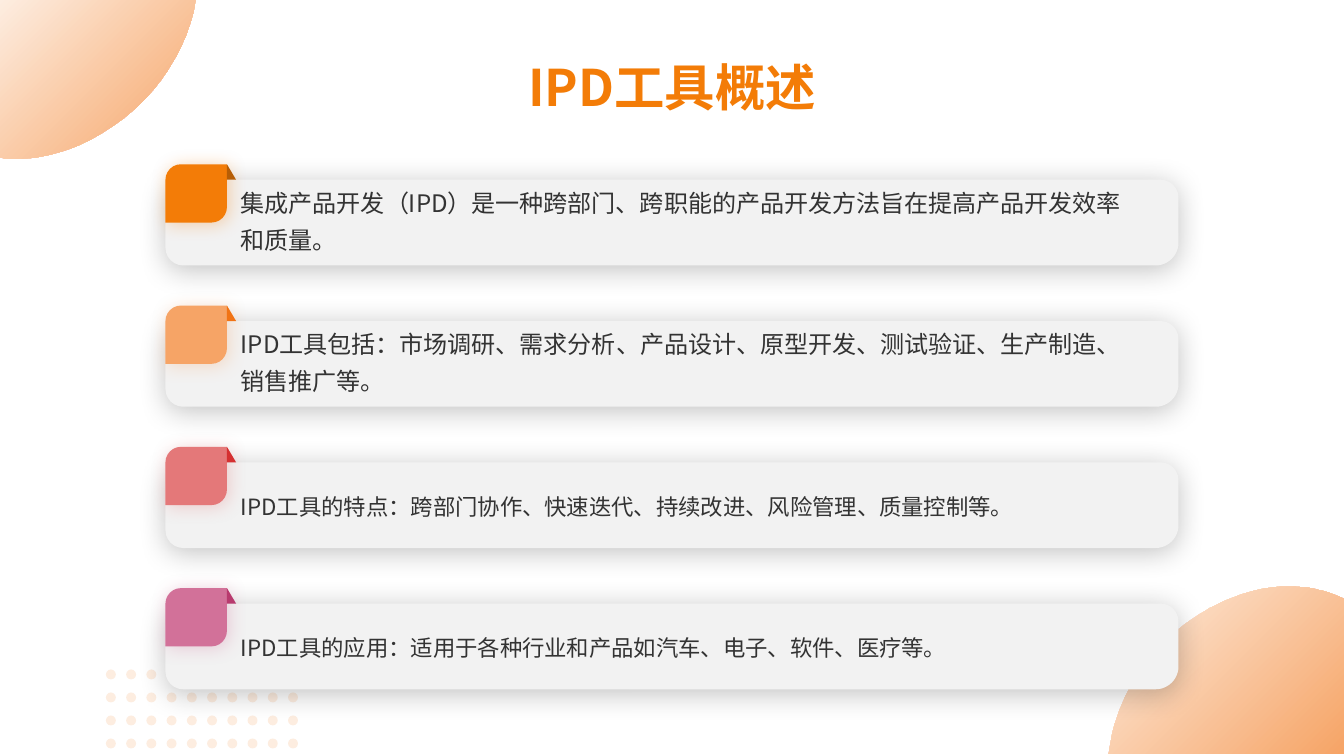
from lxml import etree
from pptx import Presentation
from pptx.dml.color import RGBColor
from pptx.enum.shapes import MSO_SHAPE
from pptx.enum.text import MSO_ANCHOR, PP_ALIGN
from pptx.oxml.ns import qn
from pptx.util import Cm, Pt

OVAL = MSO_SHAPE.OVAL
CARD = MSO_SHAPE.ROUND_2_DIAG_RECTANGLE
FOLD = MSO_SHAPE.RIGHT_TRIANGLE
MIDDLE = MSO_ANCHOR.MIDDLE
LEFT, CENTER = PP_ALIGN.LEFT, PP_ALIGN.CENTER

TITLE = "IPD工具概述"
# text, type size, line spacing, tab colour, fold colour
ROWS = [
    ("集成产品开发（IPD）是一种跨部门、跨职能的产品开发方法旨在提高产品开发效率和质量。",
     "large", 1.3, "F37C07", "B65D05"),
    ("IPD工具包括：市场调研、需求分析、产品设计、原型开发、测试验证、生产制造、销售推广等。",
     "large", 1.3, "F6A466", "F17314"),
    ("IPD工具的特点：跨部门协作、快速迭代、持续改进、风险管理、质量控制等。",
     "small", 1.5, "E47879", "D53031"),
    ("IPD工具的应用：适用于各种行业和产品如汽车、电子、软件、医疗等。",
     "small", 1.5, "D27199", "B83A6E"),
]

THEME = {
    "font": "Noto Sans CJK SC",
    "title": "F37C07", "text": "333333", "card": "F2F2F2",
    "pale": "FDEDE0", "orange": "F6A466", "shade": "000000",
    "size": {"title": 36, "large": 17.2, "small": 16},
}

# Corner outlines in cm: two numbers make a line, six make a Bézier curve
CORNERS = [
    [(0, 0), (4.93, 0), (4.88, 0.3), (4.67, 1.12, 4.22, 1.96, 3.51, 2.64),
     (2.49, 3.61, 1.22, 4.09, 0.1, 3.99), (0, 3.96)],
    [(32.46, 14.78), (32.92, 14.78, 33.35, 14.86, 33.76, 15.04),
     (33.87, 15.09), (33.87, 19), (27.94, 19), (27.97, 18.82),
     (28.09, 17.93, 28.58, 16.92, 29.39, 16.13),
     (30.3, 15.27, 31.45, 14.78, 32.46, 14.78)],
]

CARD_X, CARD_Y, CARD_W, CARD_H, PITCH = 4.17, 4.53, 25.53, 2.16, 3.56
TAB_W, TAB_H, FOLD_W, FOLD_H = 1.55, 1.47, 0.23, 0.39
DOT_X, DOT_Y, DOT, DOT_DX, DOT_DY = 2.67, 16.87, 0.25, 0.51, 0.58
DOT_COLS, DOT_ROWS = 10, 4
CURVE_STEPS = 24


def add_part(slide, kind, x, y, w, h, color, adjustments=()):
    sp = slide.shapes.add_shape(kind, Cm(x), Cm(y), Cm(w), Cm(h))
    sp.shadow.inherit = False
    sp.fill.solid()
    sp.fill.fore_color.rgb = RGBColor.from_string(color)
    sp.line.fill.background()
    for i, value in enumerate(adjustments):
        sp.adjustments[i] = value
    return sp


def cast_shadow(sp, color, alpha, blur, distance, angle):
    """Give sp an outer shadow: alpha in percent, lengths in points, angle in degrees."""
    effects = sp._element.spPr.find(qn("a:effectLst"))
    shadow = etree.SubElement(effects, qn("a:outerShdw"), blurRad=str(Pt(blur)),
                              dist=str(Pt(distance)), dir=str(angle * 60000),
                              algn="t", rotWithShape="0")
    clr = etree.SubElement(shadow, qn("a:srgbClr"), val=color)
    etree.SubElement(clr, qn("a:alpha"), val=str(alpha * 1000))


def add_text(slide, text, x, y, w, h, size, color, align=LEFT, bold=False,
             spacing=1.0, insets=(0.25, 0.13, 0.25, 0.13)):
    tf = slide.shapes.add_textbox(Cm(x), Cm(y), Cm(w), Cm(h)).text_frame
    tf.word_wrap = True
    tf.vertical_anchor = MIDDLE
    tf.margin_left, tf.margin_top, tf.margin_right, tf.margin_bottom = map(Cm, insets)
    p = tf.paragraphs[0]
    p.text = text
    p.alignment = align
    p.line_spacing = spacing
    p.font.size = Pt(THEME["size"][size])
    p.font.bold = bold
    p.font.color.rgb = RGBColor.from_string(color)
    p.font.name = THEME["font"]
    latin = p._p.pPr.find(qn("a:defRPr")).find(qn("a:latin"))
    latin.addnext(latin.makeelement(qn("a:ea"), {"typeface": THEME["font"]}))


def trace(outline):
    """Turn lines and curves in cm into points in hundredths of a cm."""
    points = [outline[0]]
    for step in outline[1:]:
        if len(step) == 2:
            points.append(step)
            continue
        controls = [points[-1], step[:2], step[2:4], step[4:]]
        for i in range(1, CURVE_STEPS + 1):
            t = i / CURVE_STEPS
            weights = ((1 - t) ** 3, 3 * t * (1 - t) ** 2, 3 * t * t * (1 - t), t ** 3)
            points.append(tuple(sum(k * c[axis] for k, c in zip(weights, controls))
                                for axis in (0, 1)))
    return [(round(x * 100), round(y * 100)) for x, y in points]


def add_corner(slide, outline):
    start, *rest = trace(outline)
    builder = slide.shapes.build_freeform(*start, scale=Cm(0.01))
    builder.add_line_segments(rest, close=True)
    sp = builder.convert_to_shape()
    sp.shadow.inherit = False
    sp.line.fill.background()
    sp.fill.gradient()
    sp.fill.gradient_angle = 315
    for stop, name in zip(sp.fill.gradient_stops, ("pale", "orange")):
        stop.color.rgb = RGBColor.from_string(THEME[name])


def add_row(slide, top, text, size, spacing, tab_color, fold_color):
    tab_y, fold_x = top - FOLD_H, CARD_X + TAB_W
    card = add_part(slide, CARD, CARD_X, top, CARD_W, CARD_H, THEME["card"], (0.267, 0.208))
    cast_shadow(card, THEME["shade"], 23, 20, 3, 107)
    tab = add_part(slide, CARD, CARD_X, tab_y, TAB_W, TAB_H, tab_color, (0.267, 0))
    cast_shadow(tab, tab_color, 31, 13, 2, 45)
    add_part(slide, FOLD, fold_x, tab_y, FOLD_W, FOLD_H, fold_color)
    add_text(slide, text, fold_x + 0.1, top + 0.03, 23.06, 2.11, size, THEME["text"],
             spacing=spacing, insets=(0.25, 0, 0.25, 0.3))


def main():
    prs = Presentation()
    prs.slide_width, prs.slide_height = Cm(33.87), Cm(19.05)
    s = prs.slides.add_slide(prs.slide_layouts[6])
    for outline in CORNERS:
        add_corner(s, outline)
    for col in range(DOT_COLS):
        for row in range(DOT_ROWS):
            add_part(s, OVAL, DOT_X + col * DOT_DX, DOT_Y + row * DOT_DY,
                     DOT, DOT, THEME["pale"])
    add_text(s, TITLE, 1.7, 1.27, 30.48, 1.8, "title", THEME["title"], CENTER, bold=True)
    for i, row in enumerate(ROWS):
        add_row(s, CARD_Y + i * PITCH, *row)
    prs.save("out.pptx")


if __name__ == "__main__":
    main()
